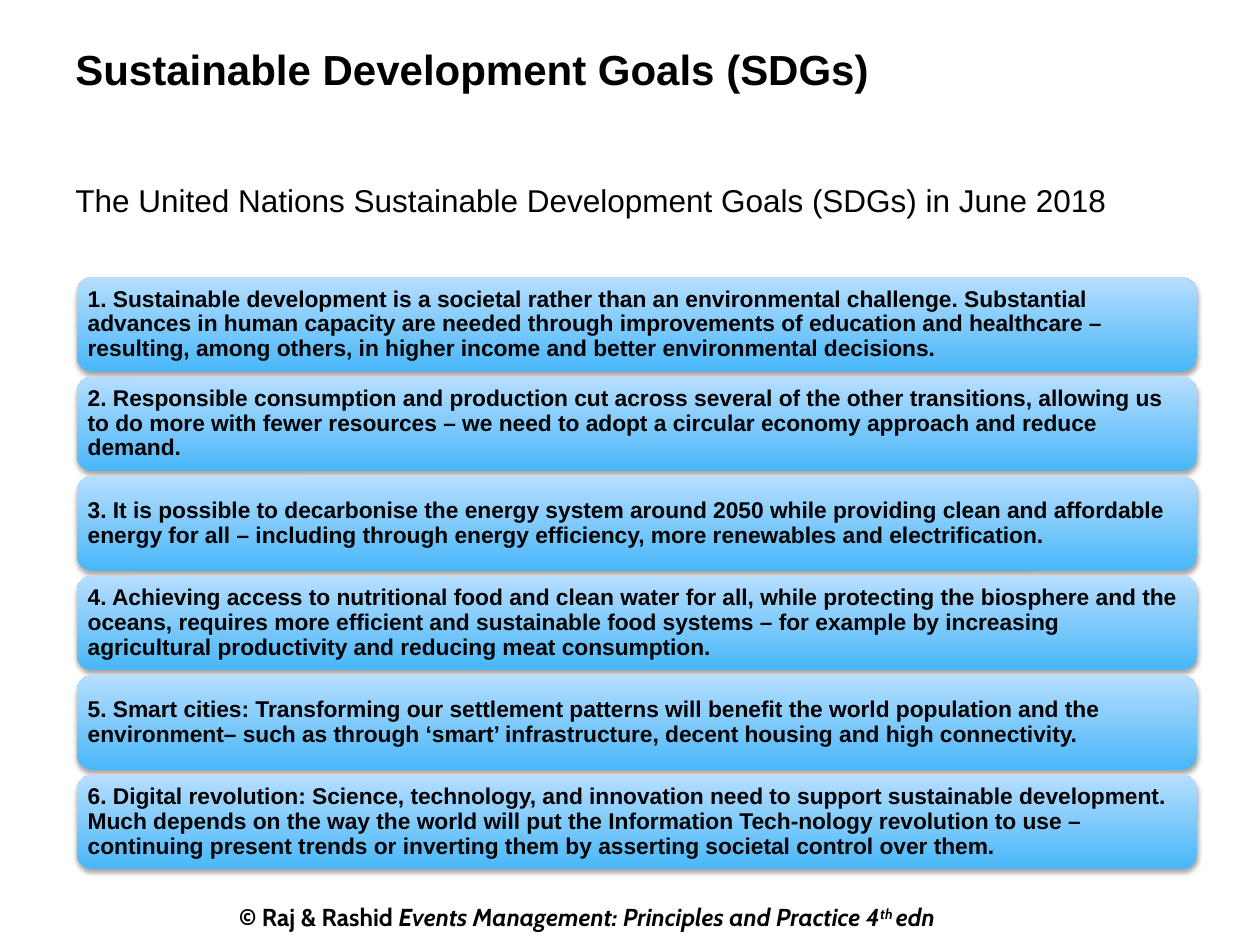
from lxml.etree import SubElement
from pptx import Presentation
from pptx.dml.color import RGBColor
from pptx.enum.shapes import MSO_SHAPE as Shape
from pptx.enum.text import MSO_ANCHOR as Anchor, PP_ALIGN as Align
from pptx.oxml.ns import qn
from pptx.util import Inches, Pt

BLACK = RGBColor(0x00, 0x00, 0x00)
DEEP_BLUE = RGBColor(0x49, 0xB7, 0xF8)
PALE_BLUE = RGBColor(0xB7, 0xDE, 0xFF)

GOALS = [
    "1. Sustainable development is a societal rather than an environmental challenge. "
    "Substantial advances in human capacity are needed through improvements of education "
    "and healthcare – resulting, among others, in higher income and better environmental "
    "decisions.",
    "2. Responsible consumption and production cut across several of the other transitions, "
    "allowing us to do more with fewer resources – we need to adopt a circular economy "
    "approach and reduce demand.",
    "3. It is possible to decarbonise the energy system around 2050 while providing clean "
    "and affordable energy for all – including through energy efficiency, more renewables "
    "and electrification.",
    "4. Achieving access to nutritional food and clean water for all, while protecting the "
    "biosphere and the oceans, requires more efficient and sustainable food systems – for "
    "example by increasing agricultural productivity and reducing meat consumption.",
    "5. Smart cities: Transforming our settlement patterns will benefit the world population "
    "and the environment– such as through ‘smart’ infrastructure, decent housing and high "
    "connectivity.",
    "6. Digital revolution: Science, technology, and innovation need to support sustainable "
    "development. Much depends on the way the world will put the Information Tech-nology "
    "revolution to use – continuing present trends or inverting them by asserting societal "
    "control over them.",
]
GOAL_TOP = 2.2
GOAL_PITCH = 0.79


class SlideBuilder:
    body_font = "Arial"
    footer_font = "Cabin"

    def __init__(self, page):
        self.page = page

    def span(self, para, text, size, font=body_font, bold=False, italic=False, raised=False):
        span = para.add_run()
        span.text = text
        span.font.name = font
        span.font.size = Pt(size)
        span.font.bold = bold
        span.font.italic = italic
        span.font.color.rgb = BLACK
        if raised:
            span._r.get_or_add_rPr().set("baseline", "30000")

    def text_box(self, left, top, width, height, wrap=True, align=Align.LEFT):
        box = self.page.shapes.add_textbox(
            Inches(left), Inches(top), Inches(width), Inches(height))
        box.text_frame.word_wrap = wrap
        para = box.text_frame.paragraphs[0]
        para.alignment = align
        return para

    def heading(self, text):
        para = self.text_box(0.5, 0.3, 7.34, 0.83)
        self.span(para, text, 24, bold=True)

    def intro(self, text):
        para = self.text_box(0.5, 1.39, 8.69, 0.76, align=Align.JUSTIFY)
        self.span(para, text, 18)

    def footer(self, author, title, ordinal, ending):
        para = self.text_box(1.8, 7.11, 6.97, 0.34, wrap=False)
        style = {"size": 14, "font": self.footer_font, "bold": True}
        self.span(para, author, **style)
        self.span(para, title, italic=True, **style)
        self.span(para, ordinal, italic=True, raised=True, **style)
        self.span(para, ending, italic=True, **style)

    def drop_shadow(self, shape):
        shape.shadow.inherit = False
        effects = shape._element.spPr.find(qn("a:effectLst"))
        shadow = SubElement(
            effects, qn("a:outerShdw"), blurRad=str(Pt(3.1)), dist=str(Pt(1.8)),
            dir="5400000", rotWithShape="0")
        color = SubElement(shadow, qn("a:srgbClr"), val=str(BLACK))
        SubElement(color, qn("a:alpha"), val="35000")

    def goal_bar(self, top, text):
        bar = self.page.shapes.add_shape(
            Shape.ROUNDED_RECTANGLE, Inches(0.61), Inches(top), Inches(8.89), Inches(0.75))
        bar.fill.gradient()
        bar.fill.gradient_angle = 90
        for stop, color in zip(bar.fill.gradient_stops, (DEEP_BLUE, PALE_BLUE)):
            stop.color.rgb = color
        bar.line.fill.background()
        self.drop_shadow(bar)

        frame = bar.text_frame
        frame.word_wrap = True
        frame.vertical_anchor = Anchor.MIDDLE
        frame.margin_left = frame.margin_right = Inches(0.05)
        frame.margin_top = frame.margin_bottom = Inches(0.05)
        para = frame.paragraphs[0]
        para.alignment = Align.LEFT
        para.line_spacing = 0.9
        self.span(para, text, 13, bold=True)


def main():
    deck = Presentation()
    deck.slide_width = Inches(10)
    deck.slide_height = Inches(7.5)
    builder = SlideBuilder(deck.slides.add_slide(deck.slide_layouts[6]))

    builder.footer("© Raj & Rashid ", "Events Management: Principles and Practice 4",
                   "th ", "edn")
    builder.heading("Sustainable Development Goals (SDGs)")
    builder.intro("The United Nations Sustainable Development Goals (SDGs) in June 2018")
    for index, goal in enumerate(GOALS):
        builder.goal_bar(GOAL_TOP + index * GOAL_PITCH, goal)

    deck.save("out.pptx")


if __name__ == "__main__":
    main()
